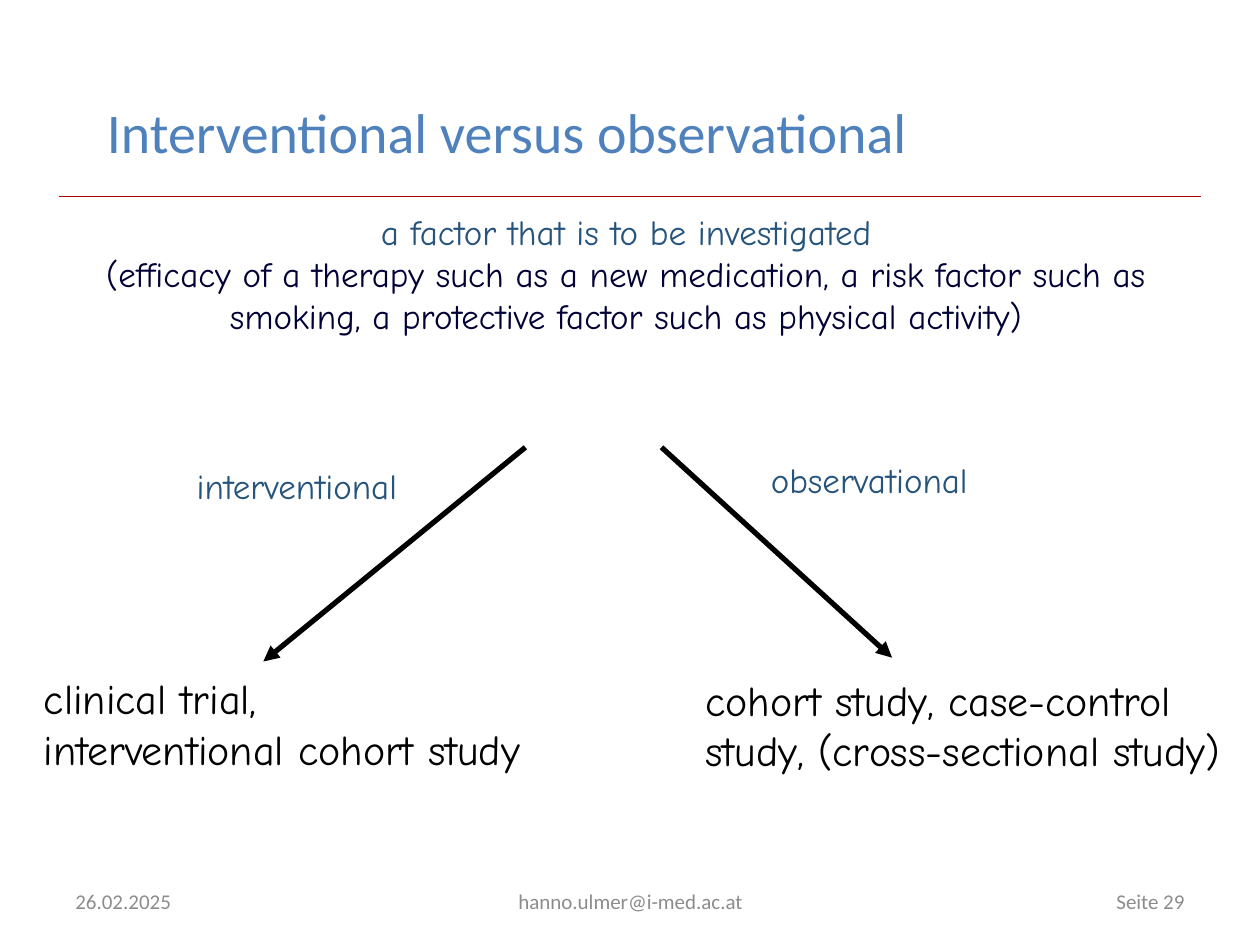
"""Builds the slide on interventional versus observational studies."""
from lxml import etree
from pptx import Presentation, util as u
from pptx.dml.color import RGBColor
from pptx.enum import shapes, text
from pptx.oxml.ns import qn

INK = {"title": "4F81BD", "term": "26547C", "note": "000036",
       "body": "000000", "foot": "8C8C8C", "rule": "AC0000"}
HAND, SANS = "Comic Neue", "Calibri"
LEFT, MID, RIGHT = text.PP_ALIGN.LEFT, text.PP_ALIGN.CENTER, text.PP_ALIGN.RIGHT


def rgb(key):
    return RGBColor.from_string(INK[key])


def add_text(slide, words, box, size, ink, font=HAND, align=LEFT, middle=False):
    shape = slide.shapes.add_textbox(*map(u.Inches, box))
    frame = shape.text_frame
    frame.word_wrap = True
    if middle:
        frame.vertical_anchor = text.MSO_ANCHOR.MIDDLE
    para = frame.paragraphs[0]
    para.text = words
    para.alignment = align
    para.font.name = font
    para.font.size = u.Pt(size)
    para.font.color.rgb = rgb(ink)
    return para


def add_line(slide, start, end, ink, width, arrow=False):
    line = slide.shapes.add_connector(
        shapes.MSO_CONNECTOR.STRAIGHT, *map(u.Inches, start + end))
    line.line.color.rgb = rgb(ink)
    line.line.width = u.Pt(width)
    if arrow:
        etree.SubElement(line.line._get_or_add_ln(), qn("a:tailEnd"), type="triangle")
    etree.SubElement(line._element.spPr, qn("a:effectLst"))


def add_factor(slide):
    para = add_text(slide, "a factor that is to be investigated\v",
                    (0.43, 1.62, 9.08, 5.33), 20, "term", align=MID)
    run = para.add_run()
    run.text = ("(efficacy of a therapy such as a new medication, a risk factor "
                "such as smoking, a protective factor such as physical activity)")
    run.font.color.rgb = rgb("note")


def add_foot(slide):
    for words, left, width, align in (
            ("26.02.2025", 0.5, 2.33, LEFT),
            ("hanno.ulmer@i-med.ac.at", 3.42, 3.17, MID),
            ("Seite 29", 7.17, 2.33, RIGHT)):
        add_text(slide, words, (left, 6.95, width, 0.4), 12, "foot", SANS, align, True)


def main():
    deck = Presentation()
    deck.slide_width, deck.slide_height = u.Inches(10), u.Inches(7.5)
    slide = deck.slides.add_slide(deck.slide_layouts[6])
    add_line(slide, (0.47, 1.56), (9.53, 1.56), "rule", 0.25)
    add_factor(slide)
    add_line(slide, (4.17, 3.55), (2.09, 5.25), "body", 3, True)
    add_line(slide, (5.25, 3.55), (7.08, 5.22), "body", 3, True)
    add_text(slide, "interventional", (0.58, 3.64, 2.67, 0.44), 20, "term", align=RIGHT)
    add_text(slide, "observational", (6.02, 3.59, 2.83, 0.44), 20, "term")
    add_text(slide, "clinical trial,\vinterventional cohort study",
             (0.25, 5.29, 4.33, 0.71), 24, "body")
    add_text(slide, "cohort study, case-control study, (cross-sectional study)",
             (5.5, 5.3, 4.33, 0.71), 24, "body")
    add_text(slide, "Interventional versus observational",
             (0.75, 0.68, 8.25, 0.72), 32, "title", SANS, middle=True)
    add_foot(slide)
    deck.save("out.pptx")


if __name__ == "__main__":
    main()
